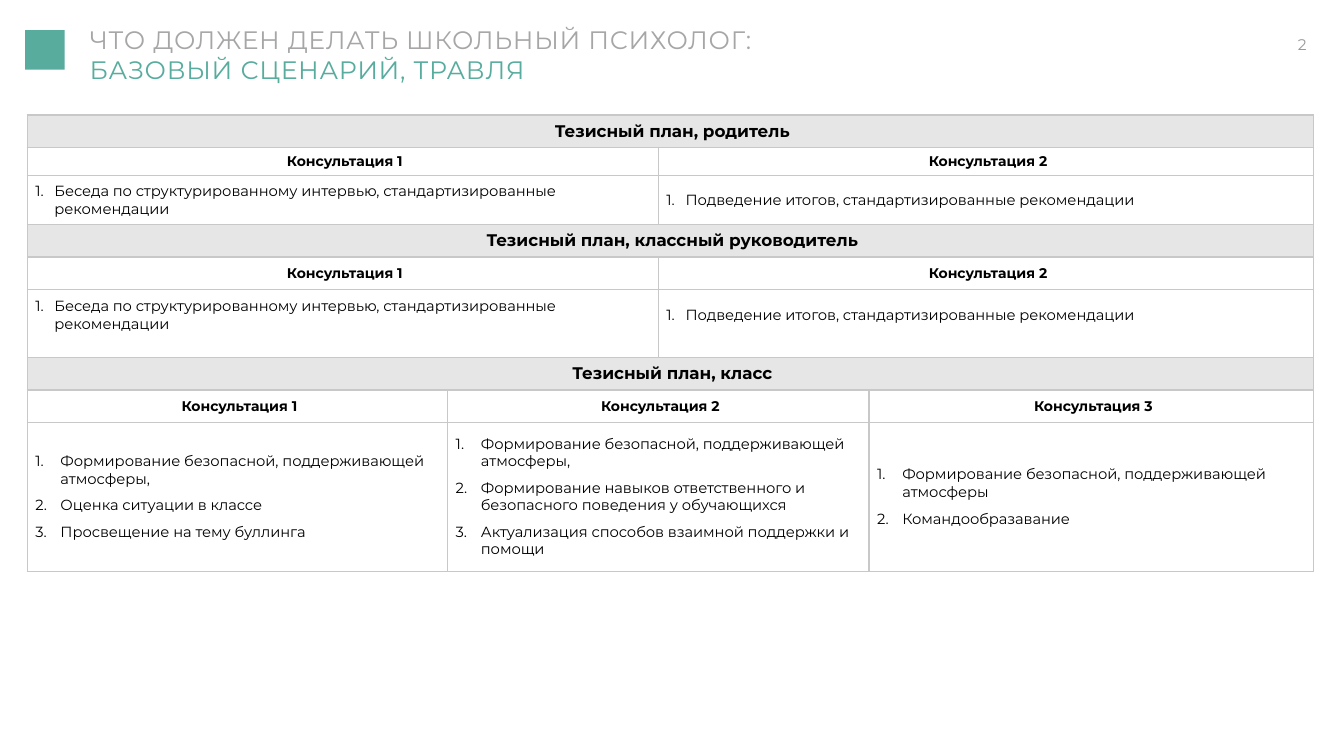
from pptx import Presentation
from pptx.dml.color import RGBColor
from pptx.enum.shapes import MSO_SHAPE as Shape
from pptx.enum.text import MSO_ANCHOR as Anchor, PP_ALIGN as Align
from pptx.oxml import parse_xml
from pptx.oxml.ns import nsdecls
from pptx.util import Inches, Pt

FONT = "Montserrat"
TEAL = RGBColor(0x58, 0xAC, 0x9E)
GREY = RGBColor(0xA6, 0xA6, 0xA6)
PAGE = RGBColor(0x99, 0x99, 0x99)
BAND = RGBColor(0xE7, 0xE6, 0xE6)
LINE = RGBColor(0xC8, 0xC8, 0xC8)
WHITE = RGBColor(0xFF, 0xFF, 0xFF)
BLACK = RGBColor(0, 0, 0)

COLS = [4.17, 2.09, 2.09, 4.41]
ROWS = [0.32, 0.28, 0.49, 0.32, 0.32, 0.68, 0.32, 0.32, 1.48]
HALVES = [(0, 1), (2, 3)]
THIRDS = [(0, 0), (1, 2), (3, 3)]
TALKS = [
    ["Беседа по структурированному интервью, стандартизированные рекомендации"],
    ["Подведение итогов, стандартизированные рекомендации"],
]
LESSONS = [
    ["Формирование безопасной, поддерживающей атмосферы,",
     "Оценка ситуации в классе",
     "Просвещение на тему буллинга"],
    ["Формирование безопасной, поддерживающей атмосферы,",
     "Формирование навыков ответственного и безопасного поведения у обучающихся",
     "Актуализация способов взаимной поддержки и помощи"],
    ["Формирование безопасной, поддерживающей атмосферы",
     "Командообразавание"],
]
# Title, column spans, lists, list indent, space after, extra bottom margin
PLANS = [
    ("Тезисный план, родитель", HALVES, TALKS, 0.19, 0, 0),
    ("Тезисный план, классный руководитель", HALVES, TALKS, 0.19, 0, 0.17),
    ("Тезисный план, класс", THIRDS, LESSONS, 0.25, 6, 0),
]


def write(frame, text, size=10.5, color=BLACK, bold=False, align=Align.LEFT,
          first=True, indent=0, after=0, track=0):
    """Put one paragraph in a frame; an indent makes it a numbered item."""
    para = frame.paragraphs[0] if first else frame.add_paragraph()
    para.alignment = align
    if after:
        para.space_after = Pt(after)
    if indent:
        props = para._p.get_or_add_pPr()
        props.set("marL", str(Inches(indent)))
        props.set("indent", str(-Inches(indent)))
        props.append(parse_xml(f'<a:buAutoNum {nsdecls("a")} type="arabicPeriod"/>'))
    run = para.add_run()
    run.text = text
    font = run.font
    font.name, font.size, font.bold = FONT, Pt(size), bold
    font.color.rgb = color
    if track:
        run._r.get_or_add_rPr().set("spc", str(int(track * 100)))


def add_box(slide, left, top, width, height, pad_x=0, pad_y=0):
    box = slide.shapes.add_textbox(*map(Inches, (left, top, width, height)))
    frame = box.text_frame
    frame.word_wrap = True
    frame.margin_left = frame.margin_right = Inches(pad_x)
    frame.margin_top = frame.margin_bottom = Inches(pad_y)
    return frame


def add_head(slide, left, top, width):
    # Square marker
    mark = slide.shapes.add_shape(
        Shape.RECTANGLE, Inches(left), Inches(top + 0.11), Inches(0.39), Inches(0.39))
    mark.shadow.inherit = False
    mark.fill.solid()
    mark.fill.fore_color.rgb = TEAL
    mark.line.fill.background()
    # Two-line title
    frame = add_box(slide, left + 0.54, top, width - 0.9, 0.71, 0.1, 0.05)
    write(frame, "ЧТО ДОЛЖЕН ДЕЛАТЬ ШКОЛЬНЫЙ ПСИХОЛОГ:", size=18, color=GREY, track=0.5)
    write(frame, "БАЗОВЫЙ СЦЕНАРИЙ, ТРАВЛЯ", size=18, color=TEAL, track=0.5, first=False)
    # Page number
    frame = add_box(slide, left + width - 0.36, top + 0.16, 0.36, 0.19)
    write(frame, "2", size=11, color=PAGE, align=Align.RIGHT)


def style_cell(cell, fill):
    props = cell._tc.get_or_add_tcPr()
    for side in "LRTB":
        props.append(parse_xml(
            f'<a:ln{side} {nsdecls("a")} w="{Pt(1)}"><a:solidFill>'
            f'<a:srgbClr val="{LINE}"/></a:solidFill></a:ln{side}>'))
    cell.fill.solid()
    cell.fill.fore_color.rgb = fill
    cell.vertical_anchor = Anchor.MIDDLE
    cell.margin_left = Inches(0.08)
    cell.margin_right = cell.margin_top = cell.margin_bottom = Inches(0.04)


def join(table, row, start, end):
    cell = table.cell(row, start)
    if end > start:
        cell.merge(table.cell(row, end))
    return cell


def add_plans(slide, left, top):
    table = slide.shapes.add_table(
        len(ROWS), len(COLS), Inches(left), Inches(top),
        Inches(sum(COLS)), Inches(sum(ROWS))).table
    table.first_row = table.horz_banding = False
    for col, width in zip(table.columns, COLS):
        col.width = Inches(width)
    for num, (row, height) in enumerate(zip(table.rows, ROWS)):
        row.height = Inches(height)
        for cell in row.cells:
            style_cell(cell, WHITE if num % 3 else BAND)

    # Each plan takes three rows: title, column heads, lists
    for num, (title, spans, lists, indent, after, extra) in enumerate(PLANS):
        row = num * 3
        band = join(table, row, 0, len(COLS) - 1)
        write(band.text_frame, title, size=12, bold=True, align=Align.CENTER)
        for count, (span, items) in enumerate(zip(spans, lists), 1):
            head = join(table, row + 1, *span)
            write(head.text_frame, f"Консультация {count}", size=10, bold=True,
                  align=Align.CENTER)
            body = join(table, row + 2, *span)
            body.margin_bottom = Inches(0.04 + extra)
            for pos, item in enumerate(items):
                write(body.text_frame, item, first=pos == 0, indent=indent, after=after)


def main():
    deck = Presentation()
    deck.slide_width, deck.slide_height = Inches(13.33), Inches(7.5)
    slide = deck.slides.add_slide(deck.slide_layouts[6])
    add_plans(slide, 0.27, 1.14)
    add_head(slide, 0.25, 0.19, 12.71)
    deck.save("out.pptx")


if __name__ == "__main__":
    main()
